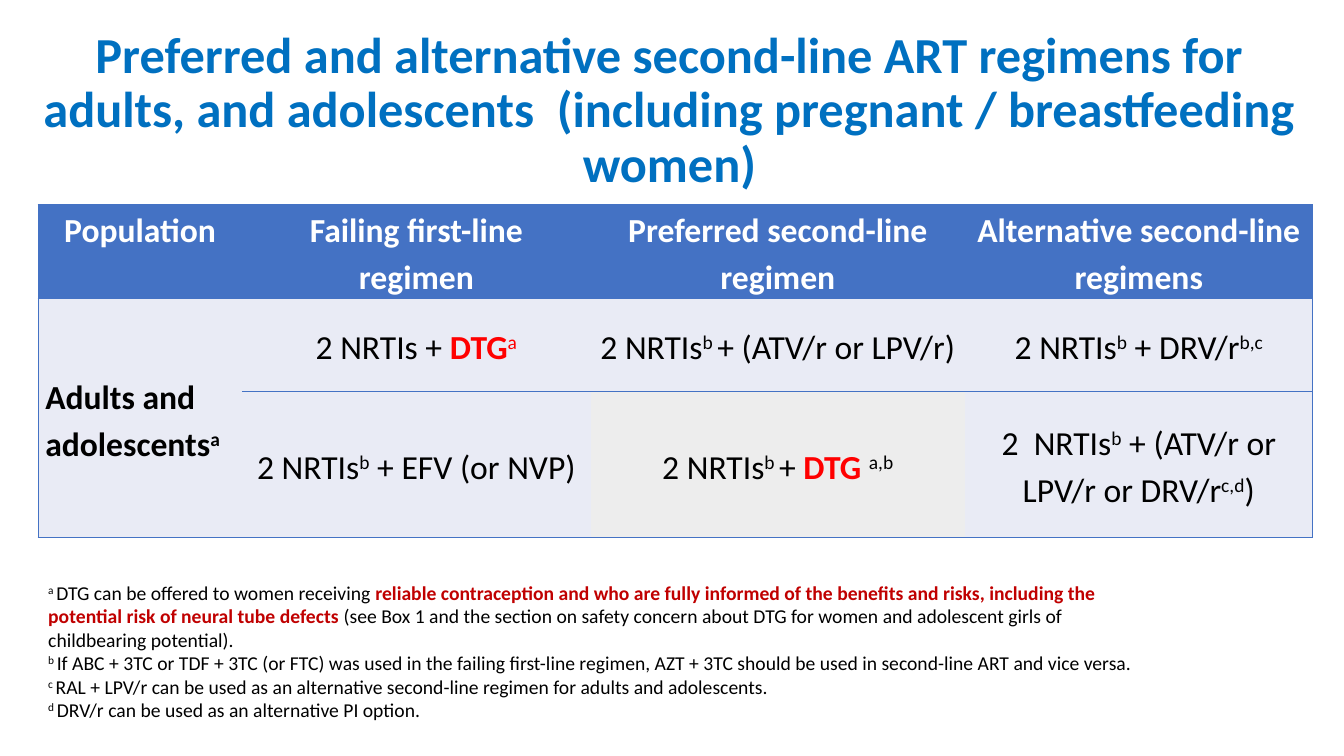
from lxml.etree import SubElement
from pptx import Presentation
from pptx.dml.color import RGBColor
from pptx.enum.text import MSO_ANCHOR as Anchor, MSO_AUTO_SIZE as AutoSize, PP_ALIGN as Align
from pptx.oxml.ns import qn
from pptx.util import Inches, Pt

BLUE, PALE, GREY, RED = "4472C4", "E9EBF5", "EDEDED", "FF0000"
WHITE, BLACK = "FFFFFF", "000000"


def color(value):
    return RGBColor.from_string(value)


def write(para, pieces, size, default, accent=RED):
    """Add runs: ^ raises the text, * makes it bold in the accent, ^* raises it in the accent, \\n breaks the line."""
    para.font.name, para.font.size = "Calibri", Pt(size)
    para.font.color.rgb = color(default)
    for piece in pieces:
        if piece == "\n":
            para.add_line_break()
            continue
        span = para.add_run()
        span.text = piece.lstrip("^*")
        if piece.startswith("^"):
            span._r.get_or_add_rPr().set("baseline", "30000")
        if piece.startswith("*"):
            span.font.bold = True
        if piece.startswith(("*", "^*")):
            span.font.color.rgb = color(accent)


deck = Presentation()
deck.slide_width, deck.slide_height = Inches(13.33), Inches(7.5)
page = deck.slides.add_slide(deck.slide_layouts[5])

# Title
title = page.shapes.title
title.left, title.top, title.width, title.height = map(Inches, (0.26, 0.26, 12.76, 1.69))
title.text_frame.auto_size = AutoSize.NONE
title.text_frame.vertical_anchor = Anchor.MIDDLE
heading = title.text_frame.paragraphs[0]
write(heading, ["Preferred and alternative second-line ART regimens for adults, and adolescents  "
                "(including pregnant / breastfeeding women)"], 36, "0070C0")
heading.font.bold = True
heading.alignment, heading.line_spacing = Align.CENTER, 0.9

# Regimen table
regimens = [
    [["Population"], ["Failing first-line", "\n", "regimen"], ["Preferred second-line regimen"],
     ["Alternative second-line regimens"]],
    [["Adults and adolescents", "^a"], ["2 NRTIs + ", "*DTG", "^*a"],
     ["2 NRTIs", "^b ", "+ (ATV/r or LPV/r)"], ["2 NRTIs", "^b", " + DRV/r", "^b,c"]],
    [[], ["2 NRTIs", "^b", " + EFV (or NVP)"], ["2 NRTIs", "^b ", "+ ", "*DTG ", "^a,b"],
     ["2  NRTIs", "^b", " + (ATV/r or LPV/r or DRV/r", "^c,d", ")"]],
]
widths, heights = (2.02, 3.46, 3.71, 3.45), (0.92, 0.92, 1.45)
table = page.shapes.add_table(3, 4, Inches(0.38), Inches(2.03),
                              Inches(sum(widths)), Inches(sum(heights))).table
for column, width in zip(table.columns, widths):
    column.width = Inches(width)
for row, height in zip(table.rows, heights):
    row.height = Inches(height)
table.cell(1, 0).merge(table.cell(2, 0))

for r, row in enumerate(regimens):
    for c, pieces in enumerate(row):
        cell = table.cell(r, c)
        cell.margin_left = cell.margin_right = Inches(0.07)
        cell.margin_top = cell.margin_bottom = 0
        cell.vertical_anchor = Anchor.MIDDLE if r else Anchor.TOP

        properties = cell._tc.get_or_add_tcPr()
        edges = {"L": c == 0, "R": c == 3, "T": not cell.is_spanned, "B": True}
        for side, visible in edges.items():
            line = SubElement(properties, qn(f"a:ln{side}"), w=str(Pt(1)))
            if visible:
                SubElement(SubElement(line, qn("a:solidFill")), qn("a:srgbClr"), val=BLUE)
            else:
                SubElement(line, qn("a:noFill"))
        cell.fill.solid()
        fill = BLUE if r == 0 else GREY if (r, c) == (2, 2) else PALE
        cell.fill.fore_color.rgb = color(fill)

        para = cell.text_frame.paragraphs[0]
        write(para, pieces, 24, BLACK if r else WHITE)
        para.font.bold = r == 0 or c == 0
        para.alignment = Align.LEFT if r and c == 0 else Align.CENTER
        para.line_spacing, para.space_after = 1.15, Pt(10)

# Footnotes
footnotes = [
    ["^a ", "DTG can be offered to women receiving ",
     "*reliable contraception and who are fully informed of the benefits and risks, "
     "including the potential risk of neural tube defects ",
     "(see Box 1 and the section on safety concern about DTG for women and adolescent girls "
     "of childbearing potential)."],
    ["^b ", "If ABC + 3TC or TDF + 3TC (or FTC) was used in the failing first-line regimen, "
     "AZT + 3TC should be used in second-line ART and vice versa."],
    ["^c ", "RAL + LPV/r can be used as an alternative second-line regimen for adults and adolescents."],
    ["^d ", "DRV/r can be used as an alternative PI option."],
]
box = page.shapes.add_textbox(Inches(0.38), Inches(5.71), Inches(11.09), Inches(1.51))
frame = box.text_frame
frame.word_wrap = True
for i, pieces in enumerate(footnotes):
    para = frame.add_paragraph() if i else frame.paragraphs[0]
    write(para, pieces, 14, BLACK, accent="C00000")

deck.save("out.pptx")
